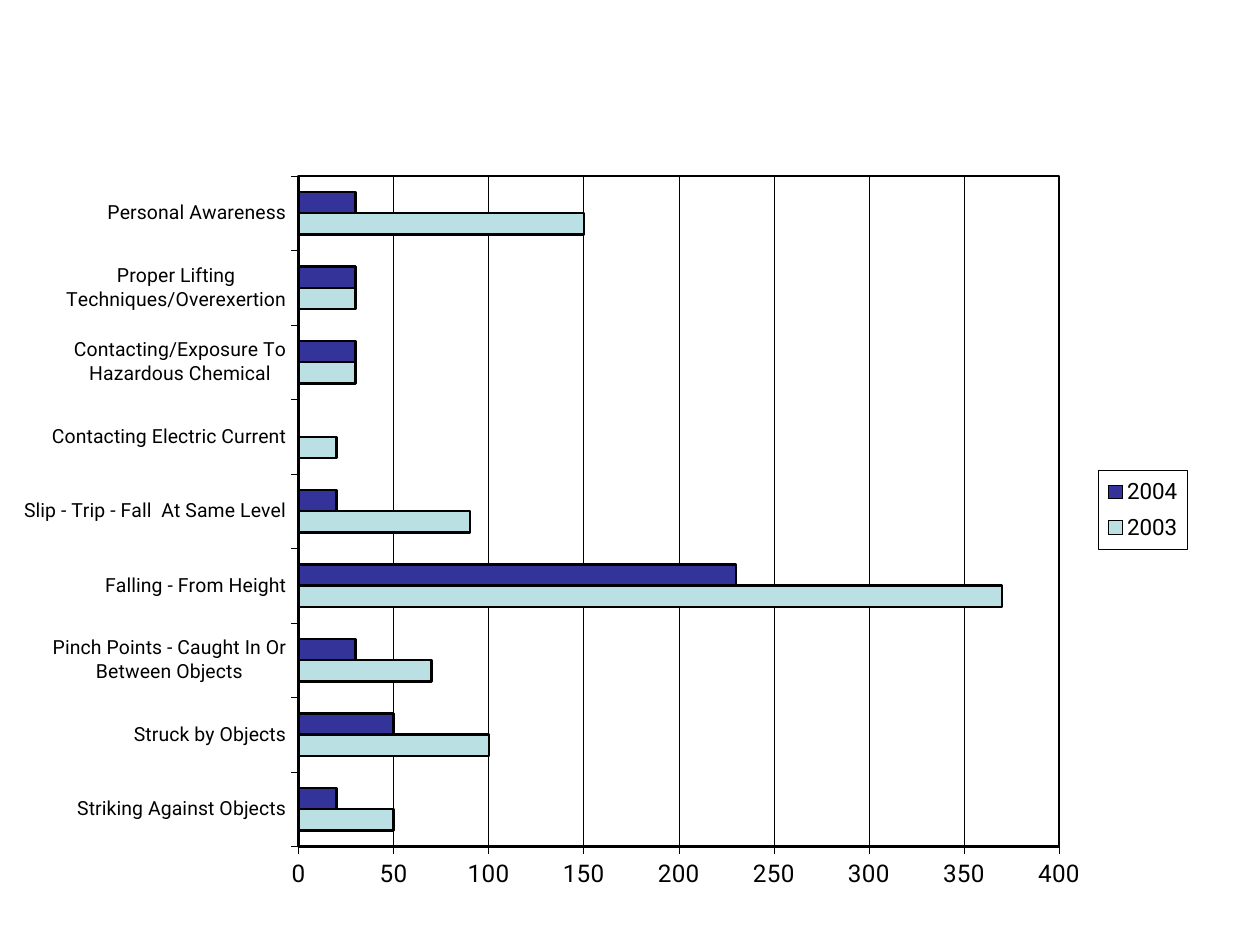
from lxml import etree
from pptx import Presentation
from pptx.chart.data import CategoryChartData
from pptx.dml.color import RGBColor
from pptx.enum.chart import XL_CHART_TYPE, XL_LEGEND_POSITION, XL_TICK_MARK
from pptx.oxml import parse_xml
from pptx.oxml.ns import nsdecls, qn
from pptx.util import Pt

BAR_CLUSTERED = XL_CHART_TYPE.BAR_CLUSTERED
LEGEND_RIGHT = XL_LEGEND_POSITION.RIGHT
TICK_OUTSIDE, TICK_NONE = XL_TICK_MARK.OUTSIDE, XL_TICK_MARK.NONE

FONT = "Roboto"
COLORS = {"ink": "000000", "paper": "FFFFFF", "2003": "BBE0E3", "2004": "333399"}
THIN, THICK = 0.35, 1.39

# cause of incident: (2003, 2004)
INCIDENTS = {
    "Striking Against Objects": (50, 20),
    "Struck by Objects": (100, 50),
    "Pinch Points - Caught In Or Between Objects": (70, 30),
    "Falling - From Height": (370, 230),
    "Slip - Trip - Fall  At Same Level": (90, 20),
    "Contacting Electric Current": (20, 0),
    "Contacting/Exposure To Hazardous Chemical": (30, 30),
    "Proper Lifting Techniques/Overexertion": (30, 30),
    "Personal Awareness": (150, 30),
}


def color(name):
    return RGBColor.from_string(COLORS[name])


def style_line(line, width):
    line.color.rgb = color("ink")
    line.width = Pt(width)


def style_font(font, size):
    font.name = FONT
    font.size = Pt(size)
    font.bold = False
    font.color.rgb = color("ink")


def manual_layout(x, y, w, h, inner=False):
    """Layout element in fractions of the chart's frame."""
    layout = etree.Element(qn("c:layout"))
    manual = etree.SubElement(layout, qn("c:manualLayout"))
    settings = [("layoutTarget", "inner")] if inner else []
    settings += [("xMode", "edge"), ("yMode", "edge"),
                 ("x", x), ("y", y), ("w", w), ("h", h)]
    for tag, value in settings:
        etree.SubElement(manual, qn(f"c:{tag}")).set("val", str(value))
    return layout


def outlined_box(width):
    """White fill and dark outline for a chart region."""
    return parse_xml(
        f'<c:spPr {nsdecls("c", "a")}>'
        f'<a:solidFill><a:srgbClr val="{COLORS["paper"]}"/></a:solidFill>'
        f'<a:ln w="{Pt(width)}"><a:solidFill><a:srgbClr val="{COLORS["ink"]}"/>'
        f'</a:solidFill></a:ln></c:spPr>')


def style_axis(axis, size):
    axis.major_tick_mark = TICK_OUTSIDE
    axis.minor_tick_mark = TICK_NONE
    style_line(axis.format.line, THIN)
    style_font(axis.tick_labels.font, size)


def style_plot_area(chart):
    plot_area = chart.plots[0]._element.getparent()
    for layout in plot_area.findall(qn("c:layout")):
        plot_area.remove(layout)
    plot_area.insert(0, manual_layout(0.233, 0.026, 0.652, 0.878, inner=True))
    plot_area.append(outlined_box(THICK))


def add_legend(chart):
    chart.has_legend = True
    legend = chart.legend
    legend.position = LEGEND_RIGHT
    legend.include_in_layout = False
    style_font(legend.font, 12.8)
    element = legend._element
    for layout in element.findall(qn("c:layout")):
        element.remove(layout)
    element.find(qn("c:legendPos")).addnext(manual_layout(0.919, 0.411, 0.076, 0.104))
    element.find(qn("c:overlay")).addnext(outlined_box(THIN))


def add_incident_chart(slide, left, top, width, height):
    data = CategoryChartData()
    data.categories = list(INCIDENTS)
    for year, counts in zip(("2003", "2004"), zip(*INCIDENTS.values())):
        data.add_series(year, counts)
    chart = slide.shapes.add_chart(
        BAR_CLUSTERED, Pt(left), Pt(top), Pt(width), Pt(height), data).chart
    chart.has_title = False
    chart.font.name = FONT

    bars = chart.plots[0]
    bars.gap_width = 150
    bars.overlap = 0
    bars.vary_by_categories = False
    for year in bars.series:
        year.format.fill.solid()
        year.format.fill.fore_color.rgb = color(year.name)
        style_line(year.format.line, THICK)

    style_axis(chart.category_axis, 11.1)
    counts_axis = chart.value_axis
    style_axis(counts_axis, 13.9)
    counts_axis.minimum_scale, counts_axis.maximum_scale = 0, 400
    counts_axis.major_unit = 50
    counts_axis.has_major_gridlines = True
    style_line(counts_axis.major_gridlines.format.line, THIN)

    style_plot_area(chart)
    add_legend(chart)


def main():
    deck = Presentation()
    deck.slide_width, deck.slide_height = Pt(720), Pt(540)
    slide = deck.slides.add_slide(deck.slide_layouts[6])
    add_incident_chart(slide, 13.7, 89.3, 668.2, 436.3)
    deck.save("out.pptx")


if __name__ == "__main__":
    main()
